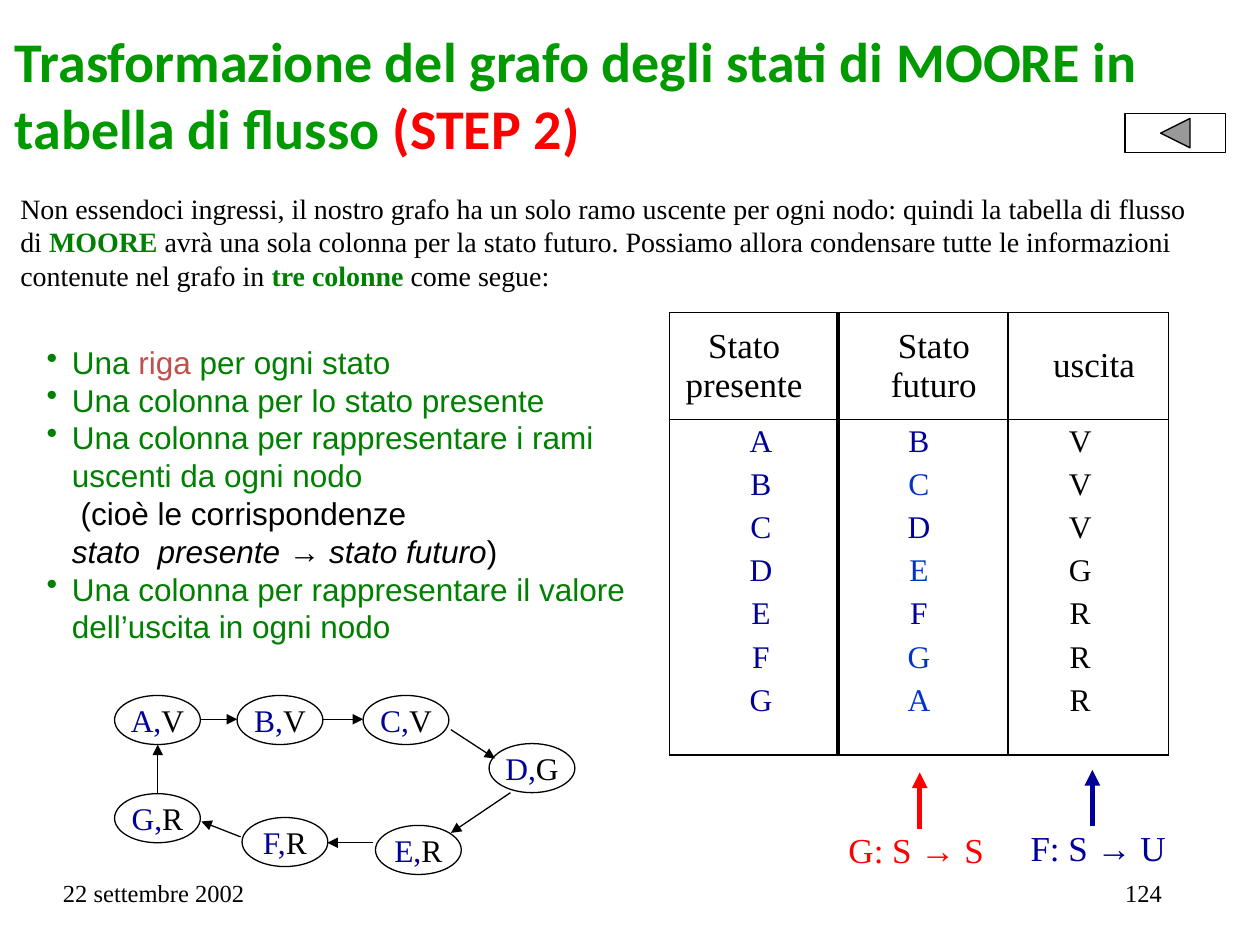
import pptx
import pptx.util
import pptx.dml.color
import pptx.enum.shapes
import pptx.enum.text
import pptx.oxml
import pptx.oxml.ns
from dataclasses import dataclass
from typing import NamedTuple, Optional

Cm = pptx.util.Cm
Pt = pptx.util.Pt
Kind = pptx.enum.shapes.MSO_SHAPE
Line = pptx.enum.shapes.MSO_CONNECTOR
Side = pptx.enum.text.PP_ALIGN
Hold = pptx.enum.text.MSO_ANCHOR
NS = pptx.oxml.ns.nsdecls("a")


@dataclass(frozen=True)
class Theme:
    black: str = "000000"
    white: str = "FFFFFF"
    navy: str = "000099"
    blue: str = "0033CC"
    red: str = "FF0000"
    rust: str = "C0504D"
    green: str = "008000"
    lime: str = "009900"
    serif: str = "Times New Roman"
    sans: str = "Arial"
    head: str = "Calibri"
    title: float = 32
    large: float = 20
    mid: float = 18
    body: float = 16
    small: float = 14
    thin: float = 0.75
    thick: float = 3


T = Theme()


class Run(NamedTuple):
    text: str
    color: str = T.black
    bold: bool = False
    slant: bool = False


class Box(NamedTuple):
    left: float
    top: float
    width: float
    height: float

    def cm(self) -> list:
        return [Cm(v) for v in self]


class Node(NamedTuple):
    state: str
    out: str
    left: float
    top: float


class Arrow(NamedTuple):
    x1: float
    y1: float
    x2: float
    y2: float
    color: str = T.black
    width: float = T.thin


class Row(NamedTuple):
    now: str
    then: str
    out: str
    shade: str


class Col(NamedTuple):
    head: str
    width: float
    top_shift: float
    shift: float
    edge: float


def rgb(code: str):
    return pptx.dml.color.RGBColor.from_string(code)


def write(frame, paras: list, size: float, font: str = T.serif, align=Side.LEFT,
          bullet: bool = False) -> None:
    for i, runs in enumerate(paras):
        para = frame.paragraphs[0] if i == 0 else frame.add_paragraph()
        para.alignment = align
        if bullet:
            props = para._p.get_or_add_pPr()
            props.set("marL", str(Cm(0.51)))
            props.set("indent", str(-Cm(0.51)))
            props.append(pptx.oxml.parse_xml(f'<a:buChar {NS} char="•"/>'))
        for item in runs:
            for j, part in enumerate(item.text.split("\n")):
                if j:
                    para.add_line_break()
                if not part:
                    continue
                run = para.add_run()
                run.text = part
                run.font.name, run.font.size = font, Pt(size)
                run.font.bold, run.font.italic = item.bold, item.slant
                run.font.color.rgb = rgb(item.color)


def pad(frame, x: float = 0, y: float = 0) -> None:
    frame.margin_left = frame.margin_right = Cm(x)
    frame.margin_top = frame.margin_bottom = Cm(y)


def label(slide, box: Box, paras: list, size: float, x: float = 0, y: float = 0,
          anchor=Hold.TOP, **style) -> None:
    frame = slide.shapes.add_textbox(*box.cm()).text_frame
    frame.word_wrap = True
    frame.vertical_anchor = anchor
    pad(frame, x, y)
    write(frame, paras, size, **style)


def solid(slide, kind, box: Box):
    shape = slide.shapes.add_shape(kind, *box.cm())
    shape.shadow.inherit = False
    shape.fill.solid()
    shape.fill.fore_color.rgb = rgb(T.white)
    shape.line.color.rgb = rgb(T.black)
    shape.line.width = Pt(T.thin)
    return shape


def circle(slide, node: Node) -> None:
    frame = solid(slide, Kind.OVAL, Box(node.left, node.top, 1.73, 0.99)).text_frame
    frame.word_wrap = False
    frame.vertical_anchor = Hold.MIDDLE
    pad(frame)
    write(frame, [[Run(node.state + ",", T.navy), Run(node.out)]], T.mid, align=Side.CENTER)


def point(slide, arrow: Arrow) -> None:
    ends = [Cm(v) for v in arrow[:4]]
    link = slide.shapes.add_connector(Line.STRAIGHT, *ends)
    link.line.color.rgb = rgb(arrow.color)
    link.line.width = Pt(arrow.width)
    link.line._get_or_add_ln().append(pptx.oxml.parse_xml(f'<a:tailEnd {NS} type="triangle"/>'))
    link._element.spPr.append(pptx.oxml.parse_xml(f"<a:effectLst {NS}/>"))


def edge(cell, side: str, width: float) -> None:
    fill = f'<a:solidFill><a:srgbClr val="{T.black}"/></a:solidFill>' if width else "<a:noFill/>"
    xml = f'<a:ln{side} {NS} w="{Pt(width)}">{fill}</a:ln{side}>'
    cell._tc.get_or_add_tcPr().append(pptx.oxml.parse_xml(xml))


def fill_cell(cell, run: Run, size: float, shift: float, top: float, anchor, rims: dict) -> None:
    for side, width in rims.items():
        edge(cell, side, width)
    cell.fill.background()
    cell.margin_left, cell.margin_right = Cm(max(0, 2 * shift)), Cm(max(0, -2 * shift))
    cell.margin_top, cell.margin_bottom = Cm(top), 0
    cell.vertical_anchor = anchor
    write(cell.text_frame, [[run]], size, align=Side.CENTER)


def flow_table(slide, cols: list, rows: list) -> None:
    high, step, total = 2.15, 0.87, 8.92
    last = total - high - step * (len(rows) - 1)
    steps = [high] + [step] * (len(rows) - 1) + [last]
    box = Box(13.49, 6.3, sum(c.width for c in cols), total)
    grid = slide.shapes.add_table(len(steps), len(cols), *box.cm()).table
    grid.first_row = grid.horz_banding = False
    for i, tall in enumerate(steps):
        grid.rows[i].height = Cm(tall)
    for c, col in enumerate(cols):
        grid.columns[c].width = Cm(col.width)
        sides = {"L": cols[c - 1].edge if c else T.thin, "R": col.edge}
        rims = {**sides, "T": T.thin, "B": T.thin}
        fill_cell(grid.cell(0, c), Run(col.head), T.large, col.top_shift, 0, Hold.MIDDLE, rims)
        for r, row in enumerate(rows, 1):
            rims = {**sides, "T": T.thin if r == 1 else 0, "B": T.thin if r == len(rows) else 0}
            color = (T.navy, row.shade, T.black)[c]
            fill_cell(grid.cell(r, c), Run(row[c], color), T.mid, col.shift, 0.1, Hold.TOP, rims)


COLS = [
    Col("Stato\npresente", 3.4, -0.19, 0.15, T.thick),
    Col("Stato\nfuturo", 3.43, 0.22, -0.08, 2 * T.thin),
    Col("uscita", 3.23, 0.12, -0.16, T.thin),
]
ROWS = [
    Row("A", "B", "V", T.navy), Row("B", "C", "V", T.blue), Row("C", "D", "V", T.navy),
    Row("D", "E", "G", T.blue), Row("E", "F", "R", T.navy), Row("F", "G", "R", T.blue),
    Row("G", "A", "R", T.blue),
]
NODES = [
    Node("A", "V", 2.31, 14.02), Node("B", "V", 4.78, 14.02), Node("C", "V", 7.32, 14.02),
    Node("D", "G", 9.86, 14.99), Node("E", "R", 7.57, 16.64), Node("F", "R", 4.88, 16.48),
    Node("G", "R", 2.31, 16),
]
ARROWS = [
    Arrow(4.04, 14.5, 4.78, 14.5), Arrow(6.5, 14.5, 7.32, 14.5),
    Arrow(9.09, 14.71, 9.98, 15.29), Arrow(10.29, 15.98, 9.09, 16.79),
    Arrow(7.52, 16.99, 6.6, 16.99), Arrow(4.85, 16.87, 4.06, 16.56),
    Arrow(3.18, 16, 3.18, 15.01),
    Arrow(18.54, 16.71, 18.54, 15.57, T.red, T.thick),
    Arrow(22.02, 16.66, 22.02, 15.52, T.navy, T.thick),
]
TITLE = [[Run("Trasformazione del grafo degli stati di MOORE in tabella di flusso ", T.lime, True),
          Run("(STEP 2)", T.red, True)]]
INTRO = [[
    Run("Non essendoci ingressi, il nostro grafo ha un solo ramo uscente per ogni nodo: "
        "quindi la tabella di flusso di "),
    Run("MOORE", T.green, True),
    Run(" avrà una sola colonna per la stato futuro. Possiamo allora condensare tutte le "
        "informazioni contenute nel grafo in "),
    Run("tre colonne ", T.green, True),
    Run("come segue:"),
]]
POINTS = [
    [Run("Una ", T.green), Run("riga", T.rust), Run(" per ogni stato", T.green)],
    [Run("Una colonna per lo stato presente", T.green)],
    [Run("Una colonna per rappresentare i rami uscenti da ogni nodo\n", T.green),
     Run(" (cioè le corrispondenze \n"),
     Run("stato  presente → stato futuro", slant=True), Run(")")],
    [Run("Una colonna per rappresentare il valore dell’uscita in ogni nodo", T.green)],
]


def main() -> None:
    deck = pptx.Presentation()
    deck.slide_width, deck.slide_height = Cm(25.4), Cm(19.05)
    slide = deck.slides.add_slide(deck.slide_layouts[6])
    label(slide, Box(1.27, 17.7, 5.84, 0.97), [[Run("22 settembre 2002")]], T.small)
    label(slide, Box(22.68, 17.7, 1.3, 1.04), [[Run("124")]], T.small)
    label(slide, Box(0.3, 0.53, 24, 3.18), TITLE, T.title, font=T.head)
    label(slide, Box(0.41, 3.86, 23.57, 2.34), INTRO, T.body)
    flow_table(slide, COLS, ROWS)
    for box, text, color in [(Box(16.73, 16.59, 3.48, 1.09), "G: S → S", T.red),
                             (Box(20.4, 16.54, 3.48, 1.09), "F: S → U", T.navy)]:
        label(slide, box, [[Run(text, color)]], T.large, anchor=Hold.MIDDLE, align=Side.CENTER)
    for node in NODES:
        circle(slide, node)
    for arrow in ARROWS:
        point(slide, arrow)
    label(slide, Box(0.69, 6.76, 12.19, 6.4), POINTS, T.mid, x=0.25, y=0.13,
          anchor=Hold.MIDDLE, font=T.sans, bullet=True)
    solid(slide, Kind.ACTION_BUTTON_BACK_OR_PREVIOUS, Box(22.68, 2.29, 2.03, 0.79))
    deck.save("out.pptx")


if __name__ == "__main__":
    main()
